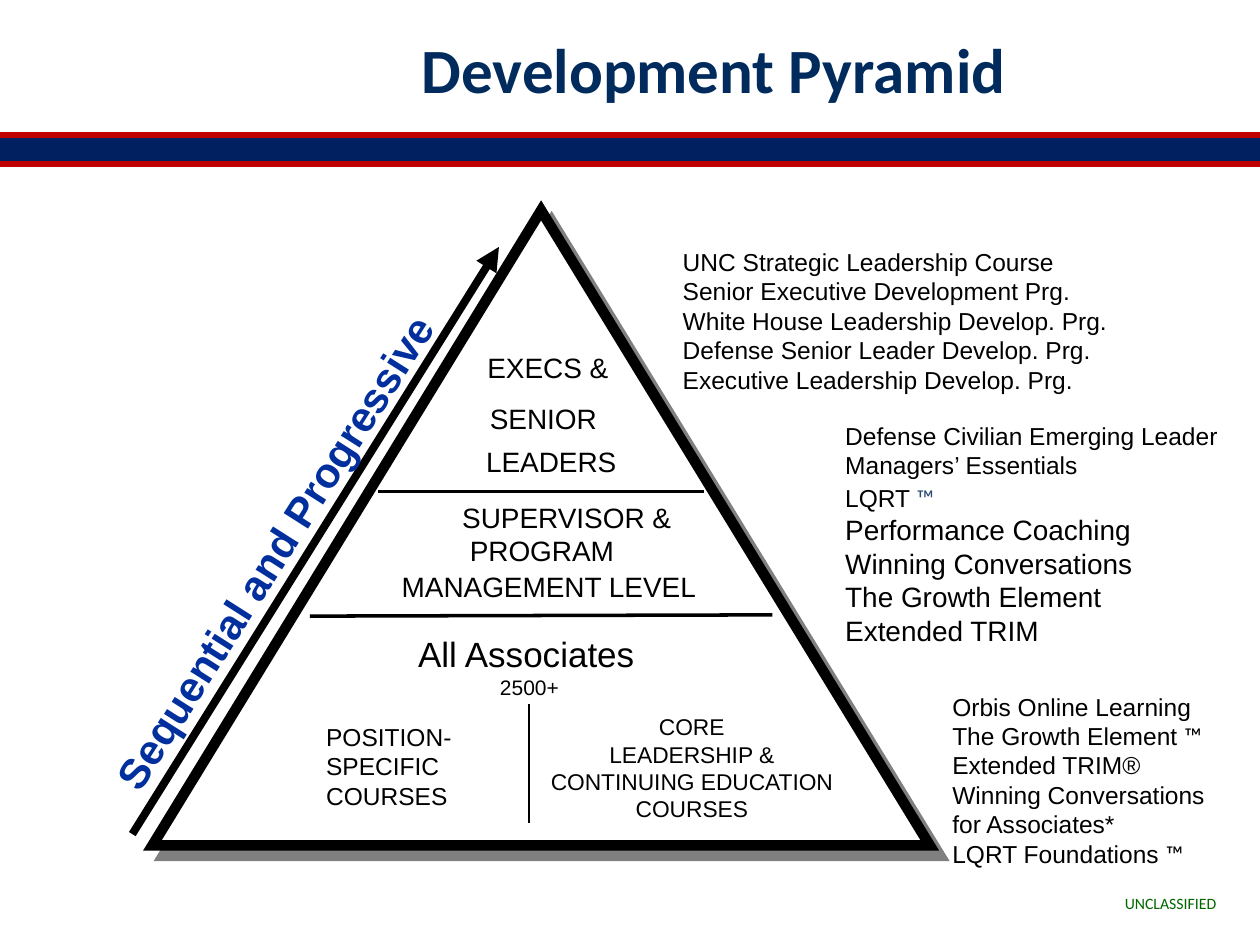
from pptx import Presentation
from pptx.dml.color import RGBColor
from pptx.enum.shapes import MSO_CONNECTOR as CONN, MSO_SHAPE as SHAPE
from pptx.enum.text import MSO_ANCHOR as ANCHOR, PP_ALIGN as ALIGN
from pptx.oxml import parse_xml
from pptx.oxml.ns import nsdecls
from pptx.util import Inches, Pt

THEME = {
    "black": "000000", "white": "FFFFFF", "navy": "002060", "red": "C00000",
    "title": "012B5D", "path": "022F9E", "mark": "27486F", "green": "006600", "shadow": "808080",
    "body": "Arial", "head": "Calibri",
    "title_size": 36, "path_size": 24, "large": 20, "level": 16, "list": 14,
    "core": 13, "small": 12, "footer": 9,
}
BASE = {"name": THEME["body"], "size": THEME["list"], "color": THEME["black"], "bold": False}
LEVEL = {"size": THEME["level"]}
TM = ("™", {"name": THEME["head"]})
BLUE_TM = ("™", {"name": THEME["head"], "color": THEME["mark"]})

TEXTS = [
    {"at": (1.5, 0.25, 8.33, 0.58), "lines": ["Development Pyramid"], "align": ALIGN.CENTER,
     "anchor": ANCHOR.MIDDLE, "font": {"name": THEME["head"], "size": THEME["title_size"],
                                      "color": THEME["title"], "bold": True}},
    {"at": (8.58, 7.04, 1.42, 0.25), "lines": ["UNCLASSIFIED"], "align": ALIGN.CENTER,
     "font": {"name": THEME["head"], "size": THEME["footer"], "color": THEME["green"]}},
    {"at": (3.22, 4.97, 2.06, 0.84), "wrap": False, "indents": {1: 0.65},
     "lines": [[("All Associates", {"size": THEME["large"]})],
               [("2500+", {"size": THEME["small"]})]]},
    {"at": (3.57, 3.92, 1.88, 0.64), "wrap": False, "indents": {1: 0.06}, "font": LEVEL,
     "lines": ["SUPERVISOR &", "PROGRAM"]},
    {"at": (3.09, 4.47, 2.56, 0.37), "wrap": False, "font": LEVEL, "lines": ["MANAGEMENT LEVEL"]},
    {"at": (3.77, 2.73, 1.23, 0.37), "font": LEVEL, "lines": ["EXECS &"]},
    {"at": (3.79, 3.14, 1.06, 0.37), "wrap": False, "font": LEVEL, "lines": ["SENIOR"]},
    {"at": (3.76, 3.48, 1.3, 0.37), "font": LEVEL, "lines": ["LEADERS"]},
    {"at": (-0.5, 3.42, 6.25, 0.5), "rotation": 302.5, "lines": ["Sequential and Progressive"],
     "font": {"size": THEME["path_size"], "color": THEME["path"], "bold": True}},
    {"at": (2.49, 5.68, 1.56, 0.81), "lines": ["POSITION-SPECIFIC COURSES"]},
    {"at": (4.24, 5.61, 2.5, 0.98), "align": ALIGN.CENTER, "font": {"size": THEME["core"]},
     "lines": ["CORE", "LEADERSHIP & CONTINUING EDUCATION COURSES"]},
    {"at": (7.46, 5.44, 2.23, 1.51), "wrap": False,
     "lines": ["Orbis Online Learning", [("The Growth Element ", {}), TM], "Extended TRIM®",
               "Winning Conversations", "for Associates*", [("LQRT Foundations ", {}), TM]]},
    {"at": (6.61, 3.29, 3.23, 2.46), "wrap": False, "before": {2: 2},
     "lines": ["Defense Civilian Emerging Leader", "Managers’ Essentials",
               [("LQRT ", {}), BLUE_TM],
               *[[(t, LEVEL)] for t in ("Performance Coaching", "Winning Conversations",
                                       "The Growth Element", "Extended TRIM")]]},
    {"at": (5.32, 1.91, 3.59, 1.28), "wrap": False,
     "lines": ["UNC Strategic Leadership Course", "Senior Executive Development Prg.",
               "White House Leadership Develop. Prg.", "Defense Senior Leader Develop. Prg.",
               "Executive Leadership Develop. Prg."]},
]
LINES = [
    {"ends": (3, 3.9, 5.59, 3.9), "width": 2},
    {"ends": (2.46, 4.89, 6.13, 4.88), "width": 2},
    {"ends": (1.05, 6.62, 3.96, 1.96), "width": 4.5, "arrow": True},
    {"ends": (4.2, 5.59, 4.2, 6.53), "width": 1},
]


def rgb(color):
    return RGBColor.from_string(color)


def element(xml):
    tag, rest = xml[:-2].partition(" ")[::2]
    return parse_xml(f"{tag} {nsdecls('a')} {rest}/>")


def set_line(line, color, width):
    line.color.rgb = rgb(color)
    line.width = Pt(width)


def add_shape(s, kind, at, fill, line, width):
    sp = s.shapes.add_shape(kind, *map(Inches, at))
    sp.shadow.inherit = False
    sp.fill.solid()
    sp.fill.fore_color.rgb = rgb(fill)
    set_line(sp.line, line, width)
    sp.line._get_or_add_ln().append(element('<a:miter lim="800000"/>'))
    return sp


def add_shadow(sp, color, distance, angle):
    effects = sp._element.spPr.find("{*}effectLst")
    effects.append(parse_xml(
        f'<a:outerShdw {nsdecls("a")} dist="{Pt(distance)}" dir="{angle * 60000}" '
        f'algn="ctr" rotWithShape="0"><a:srgbClr val="{color}"/></a:outerShdw>'))


def add_line(s, ends, width, arrow=False):
    sp = s.shapes.add_connector(CONN.STRAIGHT, *map(Inches, ends))
    set_line(sp.line, THEME["black"], width)
    if arrow:
        sp.line._get_or_add_ln().append(element('<a:tailEnd type="triangle"/>'))
    sp._element.spPr.append(element("<a:effectLst />"))


def add_text(s, at, lines, font={}, align=ALIGN.LEFT, anchor=ANCHOR.TOP, wrap=True,
             rotation=0, indents={}, before={}):
    sp = s.shapes.add_textbox(*map(Inches, at))
    sp.rotation = rotation
    tf = sp.text_frame
    for key, value in {"word_wrap": wrap, "vertical_anchor": anchor}.items():
        setattr(tf, key, value)
    for i, line in enumerate(lines):
        p = tf.paragraphs[0] if i == 0 else tf.add_paragraph()
        p.alignment = align
        if i in indents:
            p._p.get_or_add_pPr().set("marL", str(Inches(indents[i])))
        if i in before:
            p.space_before = Pt(before[i])
        for text, extra in [(line, {})] if isinstance(line, str) else line:
            r = p.add_run()
            r.text = text
            fmt = {**BASE, **font, **extra}
            r.font.color.rgb = rgb(fmt.pop("color"))
            fmt["size"] = Pt(fmt["size"])
            for key, value in fmt.items():
                setattr(r.font, key, value)


def main():
    prs = Presentation()
    prs.slide_width, prs.slide_height = Inches(10), Inches(7.5)
    s = prs.slides.add_slide(prs.slide_layouts[6])
    add_shape(s, SHAPE.RECTANGLE, (-0.06, 1.07, 10.13, 0.23), THEME["navy"], THEME["red"], 3.5)
    pyramid = add_shape(s, SHAPE.ISOSCELES_TRIANGLE, (1.21, 1.67, 6.17, 5.04),
                        THEME["white"], THEME["black"], 6)
    add_shadow(pyramid, THEME["shadow"], 8.5, 45)
    for line in LINES:
        add_line(s, **line)
    for text in TEXTS:
        add_text(s, **text)
    prs.save("out.pptx")


if __name__ == "__main__":
    main()
